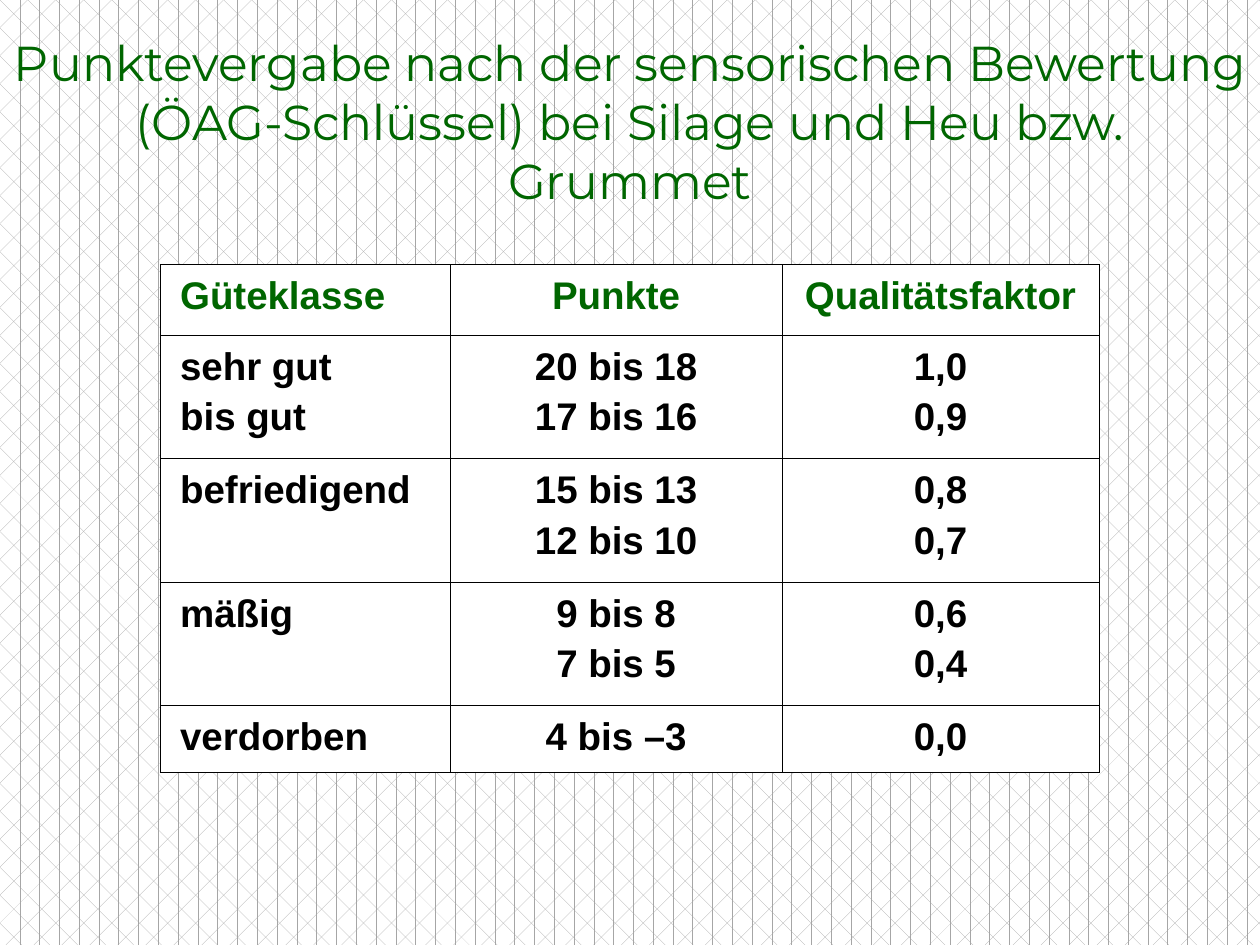
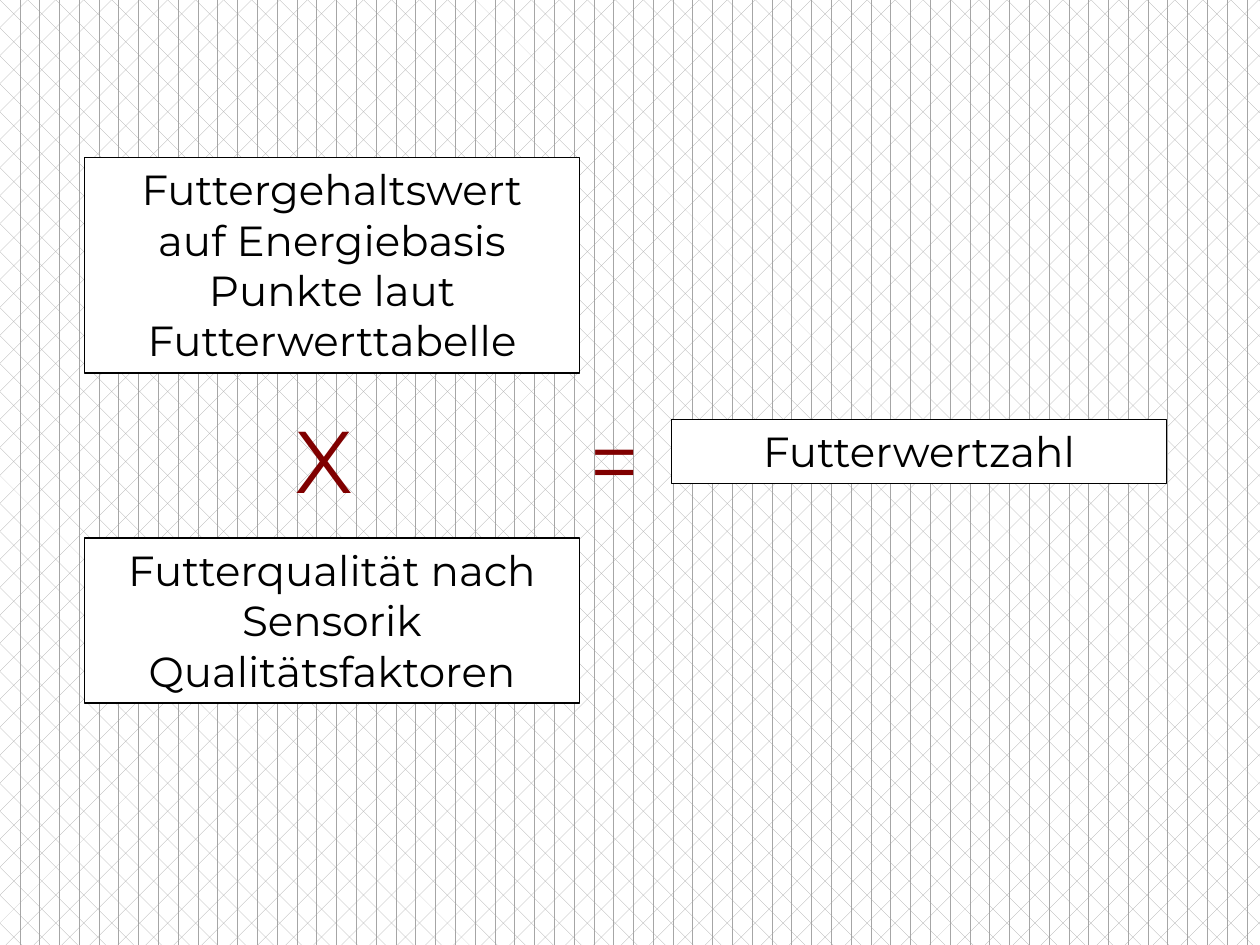
from lxml.etree import SubElement
from pptx import Presentation
from pptx.dml.color import RGBColor
from pptx.enum.dml import MSO_PATTERN
from pptx.enum.shapes import MSO_SHAPE
from pptx.enum.text import MSO_ANCHOR, MSO_AUTO_SIZE, PP_ALIGN
from pptx.oxml import parse_xml
from pptx.oxml.ns import nsdecls, qn
from pptx.util import Inches, Pt

COLS, ROWS = 100, 75
WIDTH, HEIGHT = Inches(10), Inches(7.5)
GREEN, RED, BLACK, WHITE, GREY = "006600", "800000", "000000", "FFFFFF", "A6A6A6"
HEAD, BODY = "Montserrat", "Arial"
GRADES = [
    ("Güteklasse", "Punkte", "Qualitätsfaktor"),
    ("sehr gut\nbis gut", "20 bis 18\n17 bis 16", "1,0\n0,9"),
    ("befriedigend", "15 bis 13\n12 bis 10", "0,8\n0,7"),
    ("mäßig", "9 bis 8\n7 bis 5", "0,6\n0,4"),
    ("verdorben", "4 bis –3", "0,0"),
]


def tint(code):
    """Turn a hex string into a colour."""
    return RGBColor.from_string(code)


def across(count):
    """Length of a number of grid columns."""
    return round(WIDTH * count / COLS)


def down(count):
    """Length of a number of grid rows."""
    return round(HEIGHT * count / ROWS)


def frame(box):
    """Turn a grid box into left, top, width and height."""
    left, top, width, height = box
    return across(left), down(top), across(width), down(height)


def write(text, words, face, size, code, align=PP_ALIGN.CENTER, bold=False):
    """Fill a text frame and format every run."""
    text.text = words
    for para in text.paragraphs:
        para.alignment = align
        for run in para.runs:
            font = run.font
            font.name, font.size, font.bold = face, Pt(size), bold
            font.color.rgb = tint(code)


def add_slide(deck, layout):
    """Add a slide with the shared pattern behind it."""
    slide = deck.slides.add_slide(deck.slide_layouts[layout])
    fill = slide.background.fill
    fill.patterned()
    fill.pattern = MSO_PATTERN.DIVOT
    fill.fore_color.rgb, fill.back_color.rgb = tint(GREY), tint(WHITE)
    return slide


def set_title(slide, words, box):
    """Move and format the title placeholder."""
    title = slide.shapes.title
    title.left, title.top, title.width, title.height = frame(box)
    text = title.text_frame
    write(text, words, HEAD, 28, GREEN)
    text.vertical_anchor = MSO_ANCHOR.TOP
    text.auto_size = MSO_AUTO_SIZE.NONE


def edge(cell):
    """Draw a thin line on all four sides of a cell."""
    props = cell._tc.get_or_add_tcPr()
    for spot, side in enumerate("LRTB"):
        props.insert(spot, parse_xml(
            f'<a:ln{side} {nsdecls("a")} w="3175"><a:solidFill>'
            f'<a:srgbClr val="{BLACK}"/></a:solidFill></a:ln{side}>'))


def space(para):
    """Set the space before a paragraph to a fifth of a line."""
    gap = SubElement(para._p.get_or_add_pPr(), qn("a:spcBef"))
    SubElement(gap, qn("a:spcPct")).set("val", "20000")


def add_grades(slide, box, widths, heights):
    """Build the table of grades, points and factors."""
    table = slide.shapes.add_table(len(GRADES), len(widths), *frame(box)).table
    for col, width in zip(table.columns, widths):
        col.width = across(width)
    for row, height in zip(table.rows, heights):
        row.height = down(height)
    for i, line in enumerate(GRADES):
        for j, words in enumerate(line):
            cell = table.cell(i, j)
            cell.fill.solid()
            cell.fill.fore_color.rgb = tint(WHITE)
            edge(cell)
            cell.margin_left = cell.margin_right = across(1.6)
            cell.margin_top = cell.margin_bottom = down(0.8)
            write(cell.text_frame, words, BODY, 22, BLACK if i else GREEN,
                  PP_ALIGN.CENTER if j else PP_ALIGN.LEFT, True)
            for para in cell.text_frame.paragraphs:
                space(para)


def add_card(slide, words, box):
    """Add a white card with a thin black line."""
    card = slide.shapes.add_shape(MSO_SHAPE.RECTANGLE, *frame(box))
    card.shadow.inherit = False
    card.fill.solid()
    card.fill.fore_color.rgb = tint(WHITE)
    card.line.color.rgb, card.line.width = tint(BLACK), Pt(0.75)
    text = card.text_frame
    write(text, words, HEAD, 24, BLACK)
    text.word_wrap = True
    text.vertical_anchor = MSO_ANCHOR.TOP
    text.auto_size = MSO_AUTO_SIZE.SHAPE_TO_FIT_TEXT


def add_sign(slide, words, box):
    """Add a large red operator."""
    text = slide.shapes.add_textbox(*frame(box)).text_frame
    write(text, words, HEAD, 50, RED, PP_ALIGN.LEFT)
    text.word_wrap = False
    text.auto_size = MSO_AUTO_SIZE.SHAPE_TO_FIT_TEXT


def add_formula(slide, box):
    """Set two factors on the left and their product on the right."""
    left, top, width, height = box
    card, sign = 39.3, 9.3
    base, sense, mid = 17.1, 13.1, top + 19.2
    add_card(slide, "Futtergehaltswert\nauf Energiebasis\nPunkte laut\n"
             "Futterwerttabelle", (left, top, card, base))
    add_card(slide, "Futterqualität nach\nSensorik\nQualitätsfaktoren",
             (left, top + height - sense, card, sense))
    add_card(slide, "Futterwertzahl",
             (left + width - card, mid + 1.6, card, 5.1))
    add_sign(slide, "X", (left + 15.8, mid, 7.4, sign))
    add_sign(slide, "=", (left + card - 0.2, mid, 6.6, sign))


def main():
    """Build both slides and save them."""
    deck = Presentation()
    deck.slide_width, deck.slide_height = WIDTH, HEIGHT
    slide = add_slide(deck, 5)
    add_grades(slide, (12.7, 21, 74.5, 40.2),
               (23, 26.4, 25.1), (5.6, 9.8, 9.8, 9.8, 5.3))
    set_title(slide, "Punktevergabe nach der sensorischen Bewertung "
              "(ÖAG-Schlüssel) bei Silage und Heu bzw. Grummet",
              (0, 2.1, COLS, 15.1))
    add_formula(add_slide(deck, 6), (6.7, 12.5, 85.9, 43.3))
    deck.save("out.pptx")


if __name__ == "__main__":
    main()
